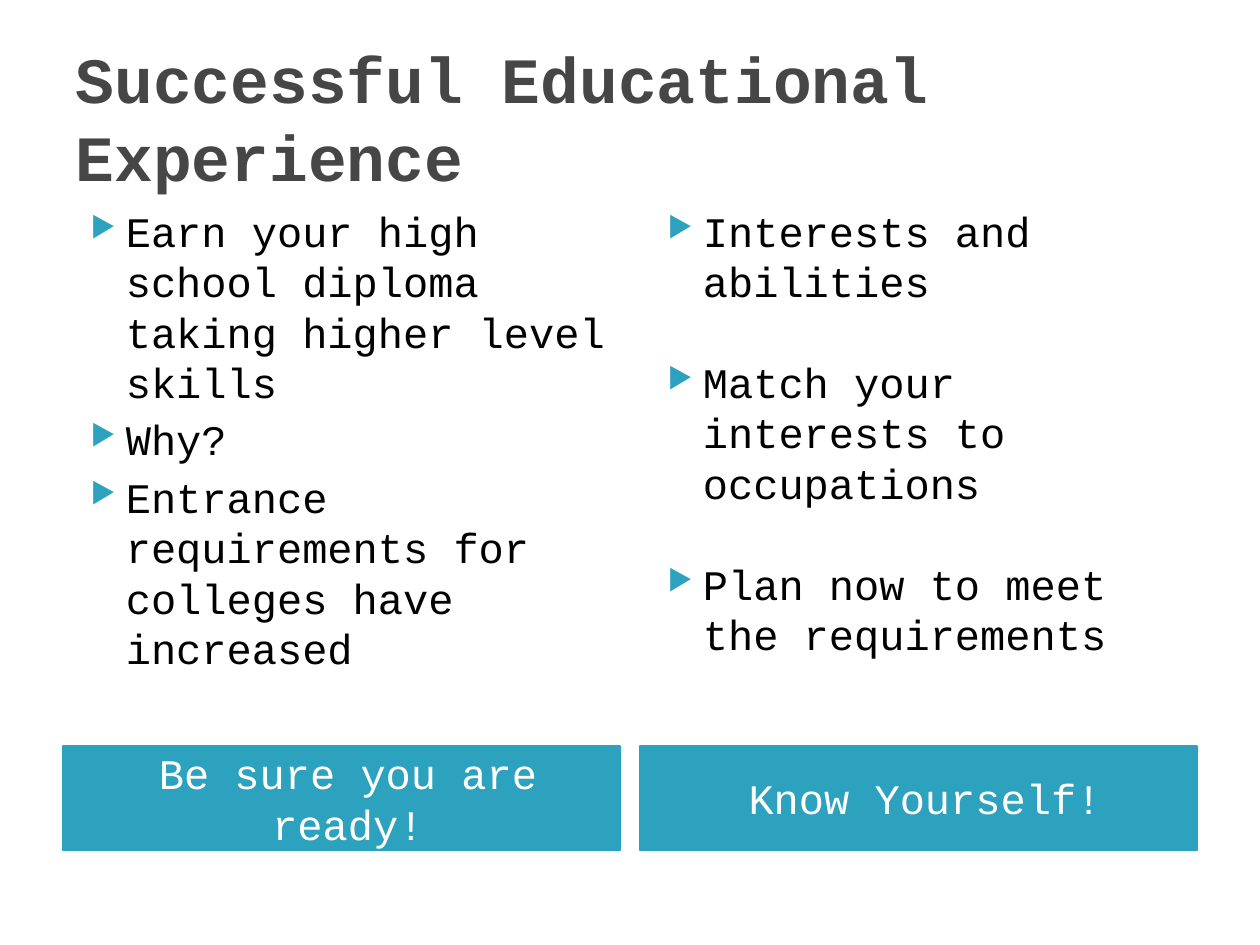
import pptx
import pptx.util
import pptx.dml.color
import pptx.enum.shapes
import pptx.enum.text
from dataclasses import dataclass
from lxml import etree

Pt = pptx.util.Pt
Align = pptx.enum.text.PP_ALIGN
Anchor = pptx.enum.text.MSO_ANCHOR


@dataclass(frozen=True)
class Theme:
    face: str = "Courier New"
    head: str = "464646"
    body: str = "000000"
    blue: str = "2DA2BF"
    white: str = "FFFFFF"
    big: float = 36.9
    text: float = 24


THEME = Theme()


def rgb(code):
    return pptx.dml.color.RGBColor.from_string(code)


def mark(para):
    """Give a paragraph a hanging triangle bullet."""
    props = para._p.get_or_add_pPr()
    props.set("marL", str(Pt(28.8)))
    props.set("indent", str(Pt(-20.16)))
    tag = "{http://schemas.openxmlformats.org/drawingml/2006/main}"
    tint = etree.SubElement(props, tag + "buClr")
    etree.SubElement(tint, tag + "srgbClr", val=THEME.blue)
    etree.SubElement(props, tag + "buSzPct", val="68000")
    etree.SubElement(props, tag + "buChar", char="▶")


def write(shape, lines, size=THEME.text, color=THEME.body, bold=False,
          align=Align.LEFT, anchor=Anchor.TOP, left=7.2, gap=0, bullet=False):
    """Fill a shape with one formatted paragraph for each line."""
    frame = shape.text_frame
    frame.word_wrap = True
    frame.auto_size = pptx.enum.text.MSO_AUTO_SIZE.NONE
    frame.vertical_anchor = anchor
    frame.margin_left, frame.margin_right = Pt(left), Pt(7.2)
    frame.margin_top = frame.margin_bottom = Pt(3.6)
    for i, line in enumerate(lines):
        para = frame.add_paragraph() if i else frame.paragraphs[0]
        if bullet:
            mark(para)
        para.alignment = align
        para.space_before = Pt(gap if i else 0)
        run = para.add_run()
        run.text = line
        font = run.font
        font.name, font.size, font.bold = THEME.face, Pt(size), bold
        font.color.rgb = rgb(color)


def title(slide, box, text):
    shape = slide.shapes.title
    shape.left, shape.top, shape.width, shape.height = map(Pt, box)
    write(shape, [text], size=THEME.big, color=THEME.head, bold=True,
          anchor=Anchor.MIDDLE)


def column(slide, box, lines, label, gap):
    """Place a bullet list with a coloured label bar at its foot."""
    x, y, wide, high = box
    bar = 59.76
    area = slide.shapes.add_textbox(Pt(x), Pt(y), Pt(wide), Pt(310.32))
    write(area, lines, gap=gap, bullet=True)

    # Label bar
    rect = pptx.enum.shapes.MSO_SHAPE.RECTANGLE
    shape = slide.shapes.add_shape(
        rect, Pt(x), Pt(y + high - bar), Pt(wide), Pt(bar))
    shape.shadow.inherit = False
    shape.fill.solid()
    shape.fill.fore_color.rgb = rgb(THEME.blue)
    shape.line.color.rgb = rgb(THEME.blue)
    shape.line.width = Pt(0.75)
    write(shape, [label], color=THEME.white, align=Align.CENTER,
          anchor=Anchor.MIDDLE, left=14.4)


def main():
    deck = pptx.Presentation()
    deck.slide_width, deck.slide_height = Pt(720), Pt(540)
    slide = deck.slides.add_slide(deck.slide_layouts[5])
    title(slide, (36, 21.6, 648, 90), "Successful Educational Experience")

    # Two equal columns: list, label, space between items
    parts = [
        (["Earn your high school diploma taking higher level skills",
          "Why?",
          "Entrance requirements for colleges have increased"],
         "Be sure you are ready!", 4),
        (["Interests and abilities",
          "Match your interests to occupations",
          "Plan now to meet the requirements"],
         "Know Yourself!", 28.8),
    ]
    wide = 318.24
    step = 648 - wide
    for i, (lines, label, gap) in enumerate(parts):
        column(slide, (36 + i * step, 113.76, wide, 372.24), lines, label, gap)

    deck.save("out.pptx")


if __name__ == "__main__":
    main()
